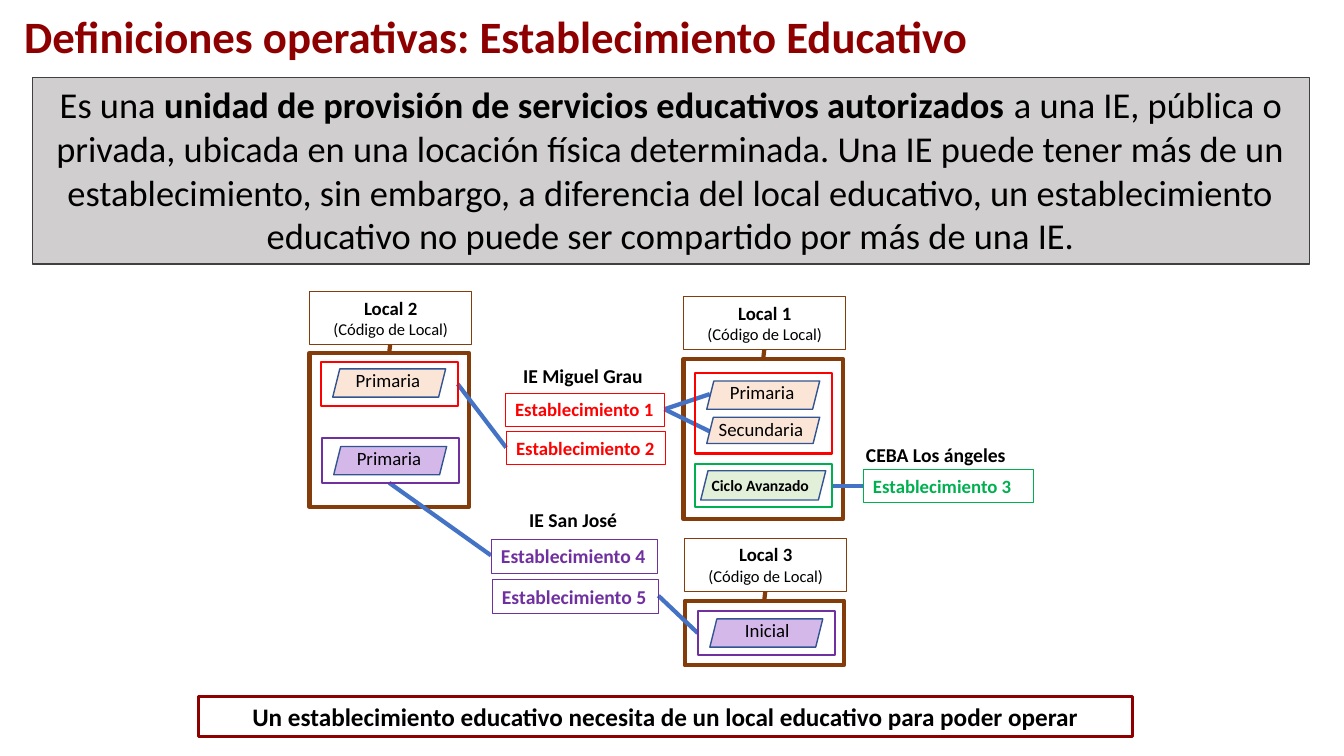
from pptx import Presentation
from pptx.dml.color import RGBColor
from pptx.enum.shapes import MSO_CONNECTOR, MSO_SHAPE
from pptx.enum.text import MSO_ANCHOR, PP_ALIGN
from pptx.oxml.ns import qn
from pptx.util import Pt
from lxml import etree

PX = 9144  # 100 px to the inch
DARK_RED, RED, GREEN, PURPLE = "8E0000", "FF0000", "00B050", "7030A0"
BROWN, BLUE, NAVY = "843C0B", "4472C4", "325491"
PEACH, LILAC, MINT = "FBE5D6", "D5B8EA", "E2F0D9"
color = RGBColor.from_string

prs = Presentation()
prs.slide_width, prs.slide_height = 1333 * PX, 750 * PX
s = prs.slides.add_slide(prs.slide_layouts[6])


def box(x, y, w, h, text="", shape=MSO_SHAPE.RECTANGLE, fill=None, line=None, weight=1,
        size=13.4, bold=False, ink="000000", align=PP_ALIGN.LEFT, wrap=True):
    """Add a box; text is a string or a list of paragraphs of (text, size, bold) runs."""
    pos = [v * PX for v in (x, y, w, h)]
    if fill or line:
        sp = s.shapes.add_shape(shape, *pos)
        sp.shadow.inherit = False
        if fill:
            sp.fill.solid()
            sp.fill.fore_color.rgb = color(fill)
        else:
            sp.fill.background()
        sp.line.color.rgb = color(line)
        sp.line.width = Pt(weight)
    else:
        sp = s.shapes.add_textbox(*pos)
    tf = sp.text_frame
    tf.word_wrap = wrap
    tf.vertical_anchor = MSO_ANCHOR.TOP
    paragraphs = [[(text, size, bold)]] if isinstance(text, str) else text
    for i, runs in enumerate(paragraphs):
        p = tf.add_paragraph() if i else tf.paragraphs[0]
        p.alignment = align
        for words, points, strong in runs:
            if words:
                r = p.add_run()
                r.text = words
                r.font.name = "Calibri"
                r.font.size = Pt(points)
                r.font.bold = strong
                r.font.color.rgb = color(ink)
    return sp


def link(x1, y1, x2, y2, ink=BLUE):
    """Add a thick straight line."""
    c = s.shapes.add_connector(MSO_CONNECTOR.STRAIGHT, *[v * PX for v in (x1, y1, x2, y2)])
    c.line.color.rgb = color(ink)
    c.line.width = Pt(3)
    etree.SubElement(c._element.spPr, qn("a:effectLst"))


title = box(11, 9, 1299, 59, "Definiciones operativas: Establecimiento Educativo",
            size=32, bold=True, ink=DARK_RED)
title.text_frame.margin_left = title.text_frame.margin_right = 13 * PX
title.text_frame.vertical_anchor = MSO_ANCHOR.MIDDLE
title.text_frame.paragraphs[0].line_spacing = 0.9

definition = [
    ("Es una ", 26, False),
    ("unidad de provisión de servicios educativos autorizados ", 26, True),
    ("a una IE, pública o privada, ubicada en una locación física determinada. "
     "Una IE puede tener más de un establecimiento, sin embargo, a diferencia del local "
     "educativo, un establecimiento educativo no puede ser compartido por más de una IE.",
     26, False),
]
box(32, 77, 1267, 185, [definition], fill="D0CECE", line="404040", align=PP_ALIGN.CENTER)
box(197, 691, 926, 40,
    "Un establecimiento educativo necesita de un local educativo para poder operar",
    line=DARK_RED, weight=2.25, size=18, bold=True, align=PP_ALIGN.CENTER)

# Premises: label, stem and building outline
for name, x, y, building_y, building_h in [
    ("Local 2", 307, 289, 350, 153),
    ("Local 1", 678, 294, 356, 159),
    ("Local 3", 679, 534, 596, 64),
]:
    box(x, building_y, 158, building_h, line=BROWN, weight=3)
    link(x + 79, building_y, x + 80, y + 53, BROWN)
    box(x, y, 161, 53, [[(name, 13.4, True)], [("(Código de Local)", 11.8, False)]],
        line=BROWN, weight=0.75, align=PP_ALIGN.CENTER)

# Links between establishments and premises
for ends in [
    (704, 391, 659, 406), (659, 406, 704, 428), (856, 482, 825, 482),
    (454, 381, 502, 444), (386, 479, 487, 551), (692, 628, 653, 591),
]:
    link(*ends)

# Frames around the services of one establishment
for x, y, h, ink in [
    (318, 359, 44, RED), (319, 435, 44, PURPLE), (689, 370, 80, RED),
    (689, 460, 43, GREEN), (692, 606, 44, PURPLE),
]:
    box(x, y, 136, h, line=ink, weight=1.5)

# Services: slanted shape, with a label offset from its corner
left, center = PP_ALIGN.LEFT, PP_ALIGN.CENTER
for name, x, y, w, h, fill, dx, dy, label_w, size, align in [
    ("Primaria", 330, 366, 112, 28, PEACH, 13, -5, 88, 13.4, left),
    ("Primaria", 331, 443, 112, 28, LILAC, 13, -5, 88, 13.4, left),
    ("Primaria", 701, 378, 112, 28, PEACH, 13, -5, 88, 13.4, left),
    ("Secundaria", 701, 414, 112, 26, PEACH, 2, -4, 107, 13.4, left),
    ("Ciclo Avanzado", 695, 467, 124, 29, MINT, 1, 0, 119, 11.2, left),
    ("Inicial", 704, 614, 112, 28, LILAC, 13, -5, 88, 13.4, center),
]:
    box(x, y, w, h, shape=MSO_SHAPE.PARALLELOGRAM, fill=fill, line=NAVY)
    box(x + dx, y + dy, label_w, 33, name, size=size, bold=size < 13, align=align)

# Institutions and their numbered establishments
for name, x, y, w in [
    ("IE Miguel Grau", 509, 356, 140),
    ("CEBA Los ángeles", 849, 434, 160),
    ("IE San José", 515, 499, 108),
]:
    box(x, y, w, 34, name, size=14, bold=True, wrap=False)

for number, x, y, w, h, size, ink in [
    (1, 501, 390, 158, 33, 13.4, RED),
    (2, 502, 428, 158, 33, 13.4, RED),
    (3, 856, 466, 169, 33, 13.4, GREEN),
    (4, 487, 535, 165, 34, 14, PURPLE),
    (5, 488, 575, 165, 34, 14, PURPLE),
]:
    box(x, y, w, h, f"Establecimiento {number}", line=ink, weight=0.75,
        size=size, bold=True, ink=ink, wrap=size < 14)

prs.save("out.pptx")
